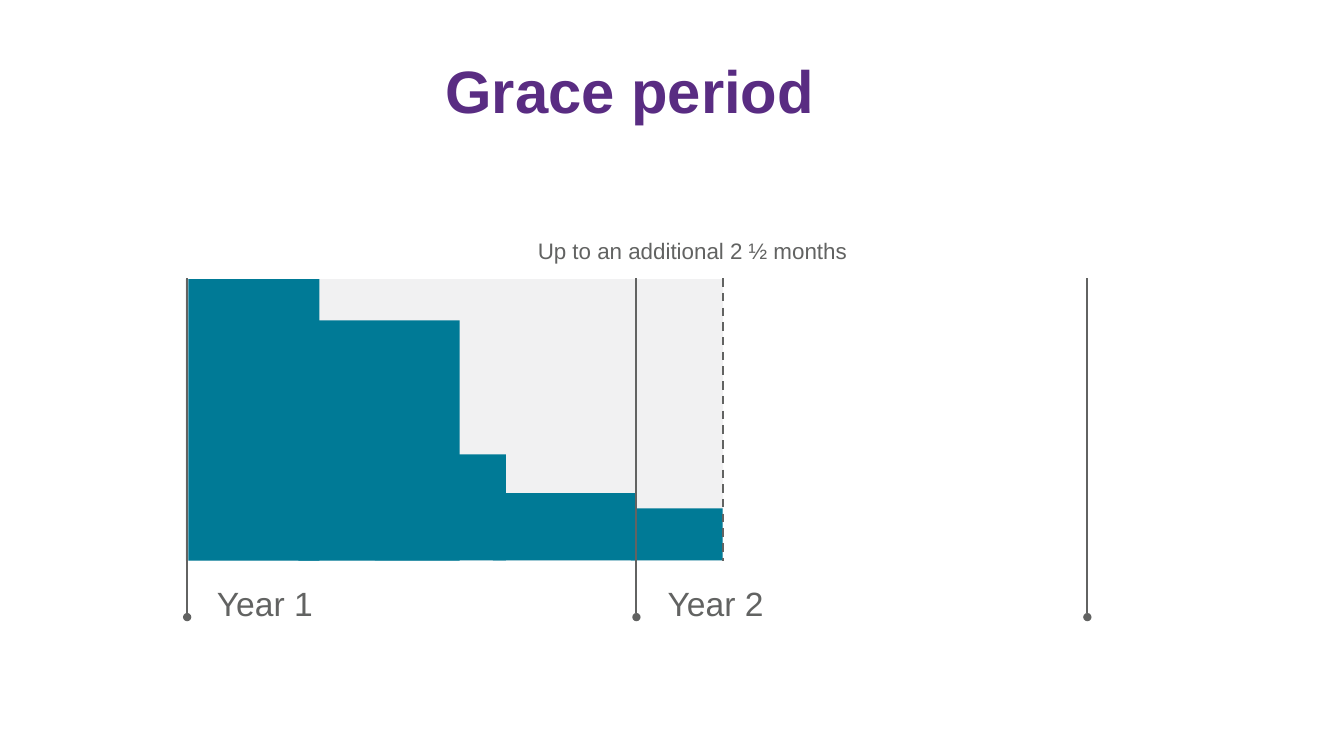
import pptx
import pptx.util
import pptx.dml.color
import pptx.enum.dml
import pptx.enum.shapes
import pptx.enum.text
import pptx.oxml.ns
from lxml import etree

Pt = pptx.util.Pt
RGB = pptx.dml.color.RGBColor
KIND = pptx.enum.shapes.MSO_SHAPE
PURPLE = RGB(0x59, 0x2C, 0x82)
TEAL = RGB(0x00, 0x7A, 0x96)
PALE = RGB(0xF1, 0xF1, 0xF2)
GREY = RGB(0x62, 0x63, 0x62)


class Page:
    font = "Arial"
    inset = Pt(9.4)

    def __init__(self, deck):
        self.slide = deck.slides.add_slide(deck.slide_layouts[5])
        self.shapes = self.slide.shapes

    def letter(self, box, text, size, color, bold=False, align=None):
        frame = box.text_frame
        frame.text = text
        frame.word_wrap = True
        frame.auto_size = pptx.enum.text.MSO_AUTO_SIZE.NONE
        frame.vertical_anchor = pptx.enum.text.MSO_ANCHOR.TOP
        frame.margin_left = frame.margin_right = self.inset
        frame.margin_top = frame.margin_bottom = self.inset
        line = frame.paragraphs[0]
        line.alignment = align
        line.font.name, line.font.size = self.font, Pt(size)
        line.font.bold, line.font.color.rgb = bold, color

    def title(self, text, left, top, width, height):
        box = self.shapes.title
        box.left, box.top = Pt(left), Pt(top)
        box.width, box.height = Pt(width), Pt(height)
        self.letter(box, text, 42.7, PURPLE, True, pptx.enum.text.PP_ALIGN.CENTER)

    def label(self, text, left, top, width, height, size):
        box = self.shapes.add_textbox(Pt(left), Pt(top), Pt(width), Pt(height))
        self.letter(box, text, size, GREY)

    def block(self, kind, left, top, width, base, color):
        box = self.shapes.add_shape(kind, Pt(left), Pt(top), Pt(width), Pt(base - top))
        if kind == KIND.PENTAGON:
            box.adjustments[0] = 0
        box.shadow.inherit = False
        box.fill.solid()
        box.fill.fore_color.rgb = color
        box.line.fill.background()

    def mark(self, x, top, end, dash=False):
        rule = self.shapes.add_connector(
            pptx.enum.shapes.MSO_CONNECTOR.STRAIGHT, Pt(x), Pt(top), Pt(x), Pt(end))
        rule.line.color.rgb = GREY
        rule.line.width = Pt(1.5)
        qn = pptx.oxml.ns.qn
        props = rule._element.spPr
        if dash:
            rule.line.dash_style = pptx.enum.dml.MSO_LINE.DASH
        else:
            tip = etree.SubElement(props.find(qn("a:ln")), qn("a:tailEnd"))
            tip.set("type", "oval")
        etree.SubElement(props, qn("a:effectLst"))


def main():
    deck = pptx.Presentation()
    deck.slide_width, deck.slide_height = Pt(960), Pt(540)
    page = Page(deck)
    page.title("Grace period", 267.8, 28.8, 364.3, 71.3)

    # Pale ground: the first year, then the grace period
    top, base = 199.4, 400.4
    for left, width in ((132.5, 322.1), (454.6, 61.9)):
        page.block(KIND.PENTAGON, left, top, width, base, PALE)

    # Falling balance
    steps = ((134.6, top, 93.6), (213.1, 228.8, 115.2), (267.8, 324.6, 93.6),
             (352.1, 352.2, 102.4), (450.7, 363.1, 65.6))
    for left, high, width in steps:
        page.block(KIND.RECTANGLE, left, high, width, base, TEAL)

    # Year bounds and the end of the grace period
    for x in (133.7, 454.6, 776.7):
        page.mark(x, 198.7, 440.8)
    page.mark(516.4, 198.7, base, dash=True)

    # Labels
    page.label("Year 1", 145.6, 406.8, 313.9, 48.2, 24)
    page.label("Year 2", 467.5, 406.8, 288, 48.2, 24)
    page.label("Up to an additional 2 ½ months", 374.7, 159.8, 313.2, 38.9, 16)

    deck.save("out.pptx")


if __name__ == "__main__":
    main()
